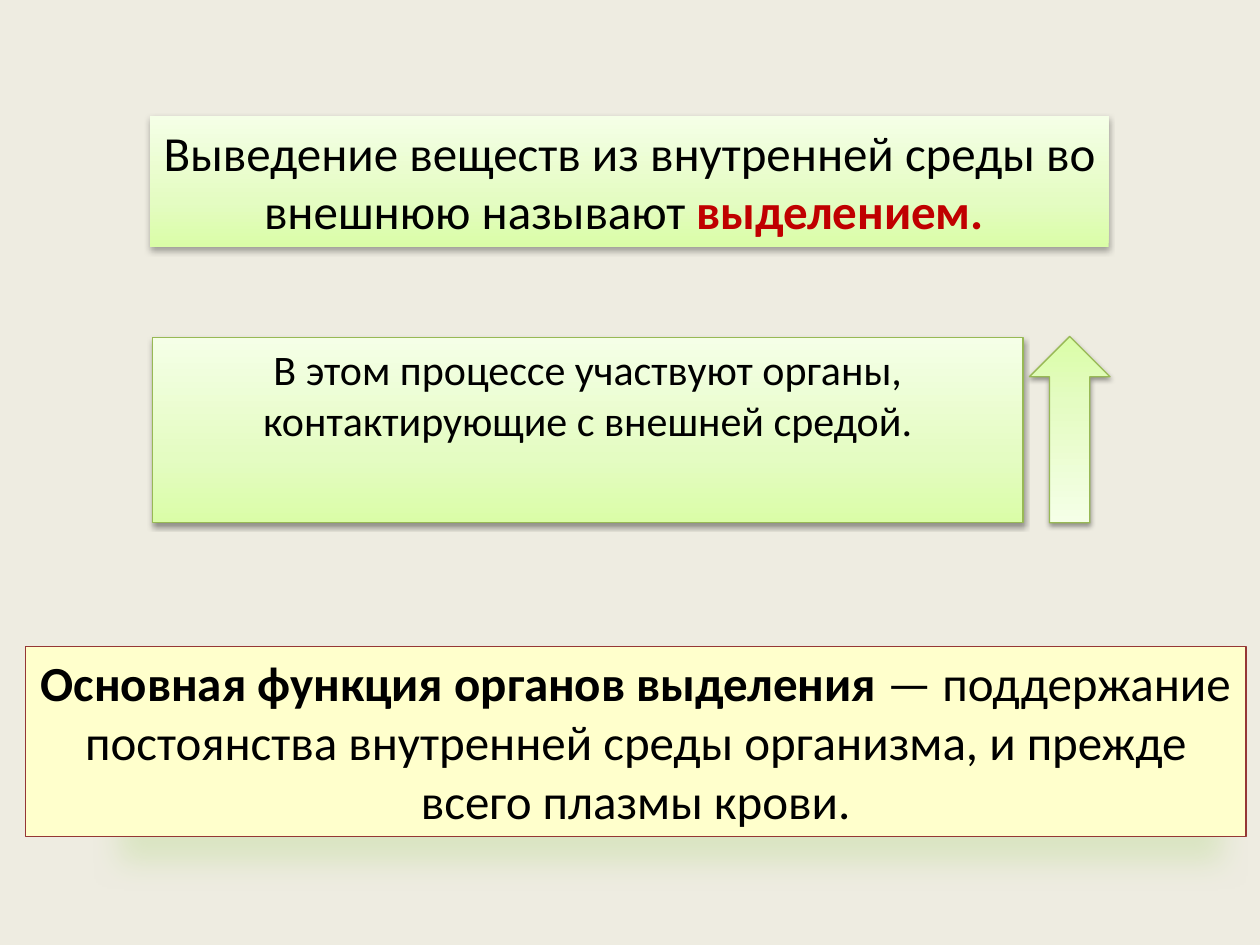
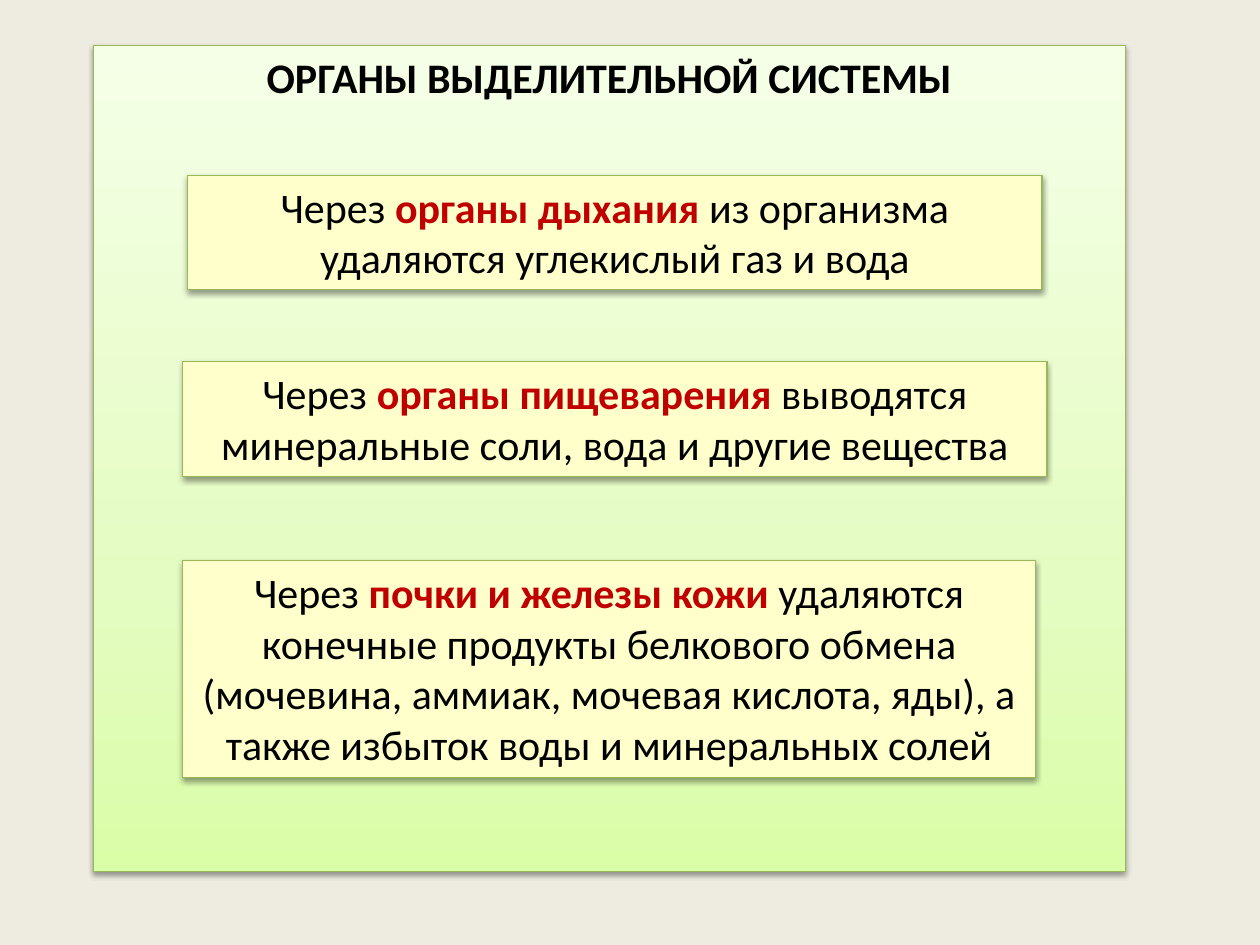
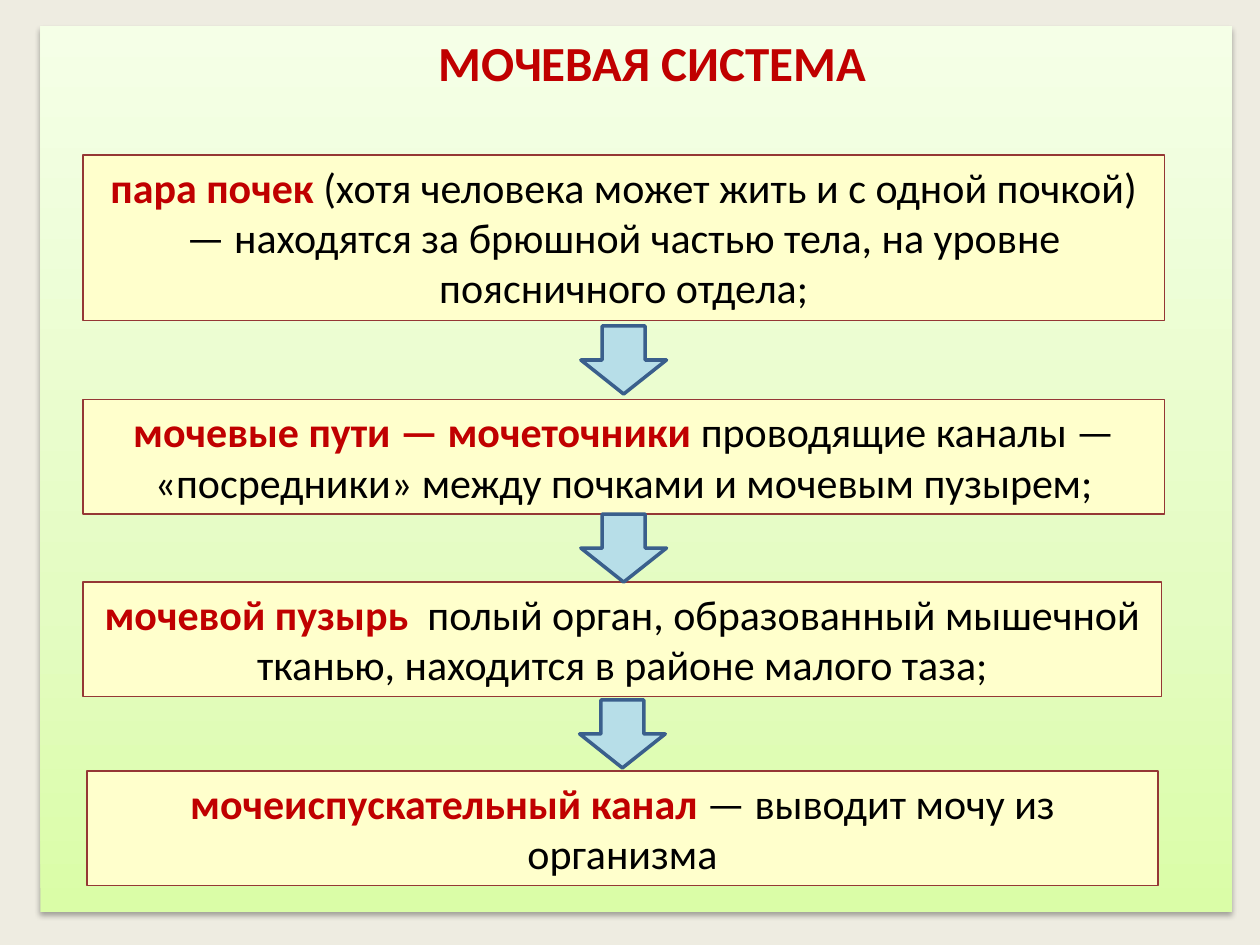
import dataclasses

import lxml.etree
import pptx
import pptx.dml.color
import pptx.enum.shapes
import pptx.enum.text
import pptx.oxml.ns
import pptx.util

SHAPES = pptx.enum.shapes.MSO_SHAPE
FONT = "Calibri"
BACKGROUND, CREAM, BLACK, RED = "EEECE1", "FFFFCC", "000000", "C00000"
GREEN_LINE, BROWN_LINE, BLUE_LINE, BLUE = "98B955", "953735", "3A5F8C", "B7DEE8"
GREEN_STOPS = [(0, "DAFDA7"), (35, "E4FCC2"), (100, "F5FFE7")]
# Shadows: colour, opacity %, blur pt, distance pt, direction in degrees, width %
SOFT_SHADOW = ("000000", 38, 3.1, 1.6, 90, 100)
WIDE_SHADOW = ("000000", 32, 3.5, 2.2, 90, 100)
GREEN_SHADOW = ("D7E4BD", 84, 17, 24, 35, 90)
COLUMNS, ROWS = 100, 75
CELL = pptx.util.Inches(0.1)
LARGE, NORMAL = 28, 24


@dataclasses.dataclass
class Box:
    """An area measured in grid columns and rows."""
    left: float
    top: float
    width: float
    height: float

    def inner(self, left, top, width, height):
        return Box(self.left + left, self.top + top, width, height)

    def lengths(self):
        sides = (self.left, self.top, self.width, self.height)
        return [round(side * CELL) for side in sides]


def color(value):
    return pptx.dml.color.RGBColor.from_string(value)


def add_element(parent, tag, **attributes):
    element = lxml.etree.SubElement(parent, pptx.oxml.ns.qn(tag))
    for name, value in attributes.items():
        element.set(name, str(value))
    return element


def fill_green(shape):
    shape.fill.gradient()
    shape.fill.gradient_angle = 90
    stops = shape.element.spPr.find(".//" + pptx.oxml.ns.qn("a:gsLst"))
    for stop in list(stops):
        stops.remove(stop)
    for position, value in GREEN_STOPS:
        stop = add_element(stops, "a:gs", pos=position * 1000)
        add_element(stop, "a:srgbClr", val=value)


def set_shadow(shape, shadow):
    shape.shadow.inherit = False
    if shadow is None:
        return
    value, opacity, blur, distance, direction, width = shadow
    effects = shape.element.spPr.find(pptx.oxml.ns.qn("a:effectLst"))
    outer = add_element(effects, "a:outerShdw", blurRad=int(pptx.util.Pt(blur)),
                        dist=int(pptx.util.Pt(distance)), dir=direction * 60000,
                        sx=width * 1000, algn="ctr", rotWithShape=0)
    tint = add_element(outer, "a:srgbClr", val=value)
    add_element(tint, "a:alpha", val=opacity * 1000)


def style(shape, fill=None, line=None, line_width=0.75, shadow=None):
    """Paint a shape; without a fill colour it gets the green gradient."""
    if fill:
        shape.fill.solid()
        shape.fill.fore_color.rgb = color(fill)
    else:
        fill_green(shape)
    if line:
        shape.line.color.rgb = color(line)
        shape.line.width = pptx.util.Pt(line_width)
    else:
        shape.line.fill.background()
    set_shadow(shape, shadow)


def write(shape, text, size=NORMAL, accent=RED):
    """Write centred text; words between asterisks are bold in the accent colour."""
    frame = shape.text_frame
    frame.word_wrap = True
    frame.auto_size = pptx.enum.text.MSO_AUTO_SIZE.NONE
    frame.vertical_anchor = pptx.enum.text.MSO_ANCHOR.TOP
    paragraph = frame.paragraphs[0]
    paragraph.alignment = pptx.enum.text.PP_ALIGN.CENTER
    paragraph.font.name = FONT
    paragraph.font.size = pptx.util.Pt(size)
    for index, words in enumerate(text.split("*")):
        if words:
            run = paragraph.add_run()
            run.text = words
            run.font.bold = index % 2 == 1
            run.font.color.rgb = color(accent if index % 2 else BLACK)


def add_shape(slide, kind, box, **look):
    shape = slide.shapes.add_shape(kind, *box.lengths())
    style(shape, **look)
    return shape


def add_text_box(slide, box, text, size=NORMAL, accent=RED, **look):
    write(add_shape(slide, SHAPES.RECTANGLE, box, **look), text, size, accent)


def add_title_panel(slide, box, text, size, accent, indent=0, **look):
    """Turn the title placeholder into the panel behind the slide's boxes."""
    title = slide.shapes.title
    title.left, title.top, title.width, title.height = box.lengths()
    style(title, **look)
    write(title, text, size, accent)
    title.text_frame.margin_left = pptx.util.Inches(0.1 + indent)


def text_height(lines):
    return 1 + 4.05 * lines


def build_definition(slide, box):
    add_text_box(slide, box.inner(11.9, 9.2, 76.1, 10.4),
                 "Выведение веществ из внутренней среды во внешнюю называют *выделением. *",
                 LARGE, shadow=WIDE_SHADOW)
    look = {"line": GREEN_LINE, "shadow": SOFT_SHADOW}
    add_text_box(slide, box.inner(12.1, 26.8, 69.1, 14.7),
                 "В этом процессе участвуют органы, контактирующие с внешней средой.", **look)
    arrow = add_shape(slide, SHAPES.DOWN_ARROW, box.inner(81.7, 26.7, 6.4, 14.8), **look)
    arrow.element.spPr.xfrm.set("flipV", "1")
    add_text_box(slide, box.inner(2, 51.3, 96.9, 15.1),
                 "*Основная функция органов выделения *— поддержание постоянства "
                 "внутренней среды организма, и прежде всего плазмы крови.",
                 LARGE, BLACK, fill=CREAM, line=BROWN_LINE, shadow=GREEN_SHADOW)


def build_organs(slide, box):
    look = {"line": GREEN_LINE, "shadow": SOFT_SHADOW}
    add_title_panel(slide, box, "*ОРГАНЫ ВЫДЕЛИТЕЛЬНОЙ СИСТЕМЫ*", NORMAL, BLACK, **look)
    organs = [
        (7.5, 10.3, 67.8, 2,
         "Через *органы дыхания *из организма удаляются углекислый газ и вода"),
        (7.1, 25.1, 68.6, 2,
         "Через *органы пищеварения *выводятся минеральные соли, вода и другие вещества"),
        (7.1, 40.9, 67.7, 4,
         "Через *почки и железы кожи *удаляются конечные продукты белкового обмена "
         "(мочевина, аммиак, мочевая кислота, яды), а также избыток воды и "
         "минеральных солей"),
    ]
    for left, top, width, lines, text in organs:
        add_text_box(slide, box.inner(left, top, width, text_height(lines)), text,
                     fill=CREAM, **look)


def build_urinary_system(slide, box):
    add_title_panel(slide, box, "*МОЧЕВАЯ СИСТЕМА*", LARGE, RED, indent=0.25,
                    shadow=WIDE_SHADOW)
    steps = [
        (3.4, 10.2, 85.8, 3,
         "*пара почек *(хотя человека может жить и с одной почкой) — находятся "
         "за брюшной частью тела, на уровне поясничного отдела;"),
        (3.4, 29.6, 85.8, 2,
         "*мочевые пути — мочеточники *проводящие каналы — «посредники» между "
         "почками и мочевым пузырем;"),
        (3.4, 44.1, 85.6, 2,
         "*мочевой пузырь * полый орган, образованный мышечной тканью, "
         "находится в районе малого таза;"),
        (3.7, 59.1, 85, 2, "*мочеиспускательный канал *— выводит мочу из организма"),
    ]
    arrow_width, arrow_height = 6.8, 5.4
    boxes = []
    for left, top, width, lines, text in steps:
        boxes.append(box.inner(left, top, width, text_height(lines)))
        add_text_box(slide, boxes[-1], text, fill=CREAM, line=BROWN_LINE)
    for upper, lower in zip(boxes, boxes[1:]):
        gap = lower.top - upper.top - upper.height
        arrow_box = upper.inner((upper.width - arrow_width) / 2,
                                upper.height + (gap - arrow_height) / 2,
                                arrow_width, arrow_height)
        add_shape(slide, SHAPES.DOWN_ARROW, arrow_box, fill=BLUE, line=BLUE_LINE,
                  line_width=2)


def main():
    presentation = pptx.Presentation()
    presentation.slide_width = COLUMNS * CELL
    presentation.slide_height = ROWS * CELL
    background = presentation.slide_master.background.fill
    background.solid()
    background.fore_color.rgb = color(BACKGROUND)
    title_only, blank = presentation.slide_layouts[5], presentation.slide_layouts[6]
    pages = [
        (blank, build_definition, Box(0, 0, COLUMNS, ROWS)),
        (title_only, build_organs, Box(7.4, 3.6, 81.9, 65.6)),
        (title_only, build_urinary_system, Box(3.2, 2.1, 94.6, 70.3)),
    ]
    for layout, build, box in pages:
        build(presentation.slides.add_slide(layout), box)
    presentation.save("out.pptx")


if __name__ == "__main__":
    main()
